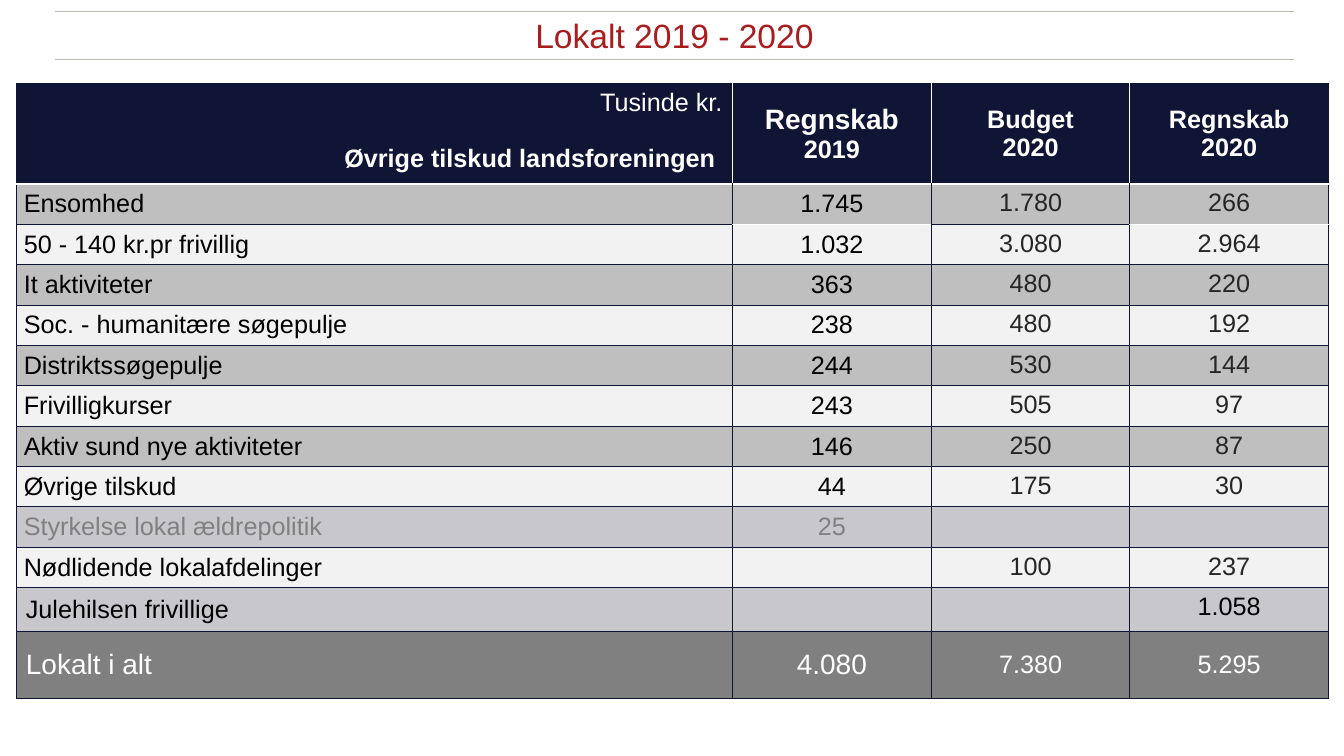
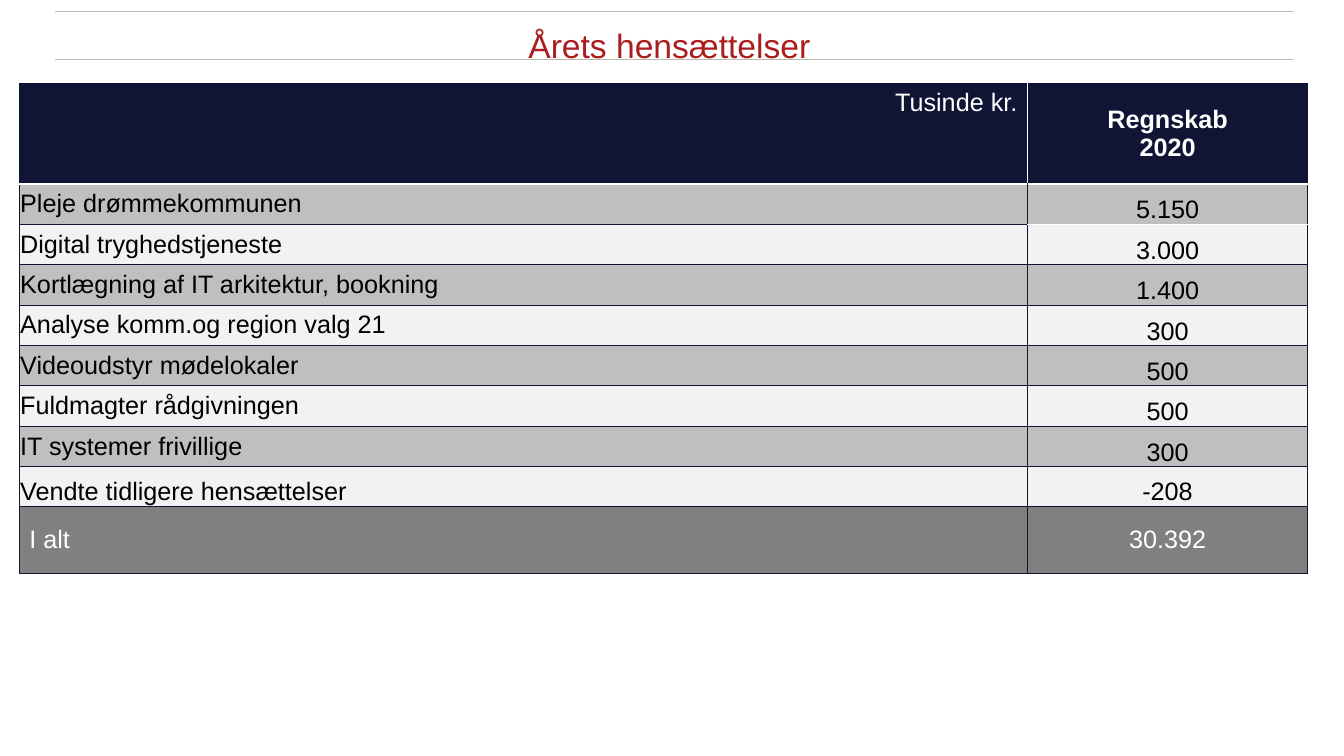
"""Builds two slides with tables of local grants and of the year's provisions."""
from lxml import etree
from pptx import Presentation
from pptx import util as u
from pptx.dml.color import RGBColor
from pptx.enum import shapes, text
from pptx.oxml import ns

RED = RGBColor(0xA9, 0x1D, 0x1E)
RULE = RGBColor(0xBC, 0xB8, 0xAF)
NAVY = RGBColor(0x11, 0x15, 0x35)
EDGE = RGBColor(0x10, 0x14, 0x35)
WHITE = RGBColor(0xFF, 0xFF, 0xFF)
BLACK = RGBColor(0x00, 0x00, 0x00)
INK = RGBColor(0x26, 0x26, 0x26)
GREY = RGBColor(0xBF, 0xBF, 0xBF)
PALE = RGBColor(0xC8, 0xC7, 0xCB)
MIST = RGBColor(0xF2, 0xF2, 0xF2)
TOTAL = RGBColor(0x80, 0x80, 0x80)

FONT = "Arial"
LEFT, CENTER, RIGHT = text.PP_ALIGN.LEFT, text.PP_ALIGN.CENTER, text.PP_ALIGN.RIGHT
TOP, MIDDLE, BOTTOM = text.MSO_ANCHOR.TOP, text.MSO_ANCHOR.MIDDLE, text.MSO_ANCHOR.BOTTOM
HEADER_HEIGHT, TOTAL_HEIGHT, TABLE_TOP = 13.27, 8.93, 11.07


class Deck:
    """Holds the style and the current slide; lengths are percent of the slide."""

    def __init__(self):
        self.prs = Presentation()
        self.prs.slide_width, self.prs.slide_height = u.Inches(13.33), u.Inches(7.5)
        self.slide = None

    def x(self, share):
        return round(self.prs.slide_width * share / 100)

    def y(self, share):
        return round(self.prs.slide_height * share / 100)

    def new_slide(self, title, left, top):
        self.slide = self.prs.slides.add_slide(self.prs.slide_layouts[6])
        for height in (7.87, 1.47):
            self.rule(4.13, 96.25, height)
        self.title(title, left, top)

    def rule(self, start, end, height):
        line = self.slide.shapes.add_connector(
            shapes.MSO_CONNECTOR.STRAIGHT,
            self.x(start), self.y(height), self.x(end), self.y(height))
        line.line.color.rgb = RULE
        line.line.width = u.Pt(0.75)
        etree.SubElement(line._element.spPr, ns.qn("a:effectLst"))

    def title(self, words, left, top):
        box = self.slide.shapes.add_textbox(
            self.x(left), self.y(top), self.x(92.12), self.y(6.93))
        frame = box.text_frame
        frame.word_wrap = True
        frame.vertical_anchor = MIDDLE
        frame.margin_left = frame.margin_right = u.Inches(0.06)
        frame.margin_top = frame.margin_bottom = u.Inches(0.06)
        self.style_text(frame.paragraphs[0], words, 24, RED, CENTER)

    def style_text(self, paragraph, words, size, color, align, bold=False):
        paragraph.text = words
        paragraph.alignment = align
        font = paragraph.font
        font.name, font.size, font.bold = FONT, u.Pt(size), bold
        font.color.rgb = color

    def cell(self, cell, words, fill, color, align, anchor=MIDDLE, size=18, bold=False):
        cell.fill.solid()
        cell.fill.fore_color.rgb = fill
        cell.vertical_anchor = anchor
        frame = cell.text_frame
        for i, line in enumerate(words.split("\n")):
            paragraph = frame.add_paragraph() if i else frame.paragraphs[0]
            self.style_text(paragraph, line, size, color, align, bold)

    def borders(self, cell, **white):
        """Draws navy edges, or white ones at the widths given by side."""
        props = cell._tc.get_or_add_tcPr()
        for i, side in enumerate("LRTB"):
            edge = etree.Element(ns.qn(f"a:ln{side}"), w=str(u.Pt(white.get(side, 0.75))))
            fill = etree.SubElement(edge, ns.qn("a:solidFill"))
            color = WHITE if side in white else EDGE
            etree.SubElement(fill, ns.qn("a:srgbClr"), val=str(color))
            props.insert(i, edge)

    def table(self, left, widths, row_heights, header, body, total,
              anchors, inks, label_inset, total_sizes):
        heights = [HEADER_HEIGHT, *row_heights, TOTAL_HEIGHT]
        grid = self.slide.shapes.add_table(
            len(heights), len(widths), self.x(left), self.y(TABLE_TOP),
            self.x(sum(widths)), self.y(sum(heights))).table
        grid.first_row = grid.horz_banding = False
        for column, width in zip(grid.columns, widths):
            column.width = self.x(width)
        for row, height in zip(grid.rows, heights):
            row.height = self.y(height)

        last = len(widths) - 1
        for c, words in enumerate(header):
            self.cell(grid.cell(0, c), words, NAVY, WHITE, CENTER if c else RIGHT,
                      MIDDLE if c else TOP, bold=bool(c))
        for r, values in enumerate(body, 1):
            fill = MIST if r % 2 == 0 else GREY if all(values) else PALE
            for c, words in enumerate(values):
                spot = grid.cell(r, c)
                self.cell(spot, words, fill, inks[c], CENTER if c else LEFT, anchors[c])
                if c == 0:
                    spot.margin_left = u.Inches(label_inset)
                if anchors[c] == BOTTOM:
                    spot.margin_bottom = 0
        for c, words in enumerate(total):
            self.cell(grid.cell(len(body) + 1, c), words, TOTAL, WHITE,
                      CENTER if c else LEFT, size=total_sizes[c])

        for r in range(len(heights)):
            for c in range(last + 1):
                white = {}
                if r == 0:
                    white["B"] = 1 if c in (1, last) else 2
                    if c > 0:
                        white["L"] = 1
                    if c < last:
                        white["R"] = 1
                elif r == 1:
                    white["T"] = 1 if c in (1, last) else 2
                if c in (1, last) and r in (1, 2):
                    white["B" if r == 1 else "T"] = 1
                self.borders(grid.cell(r, c), **white)
        return grid


def local_grants(deck):
    deck.new_slide("Lokalt 2019 - 2020", 4.13, 1.2)
    grants = [
        ("Ensomhed", "1.745", "1.780", "266"),
        ("50 - 140 kr.pr frivillig", "1.032", "3.080", "2.964"),
        ("It aktiviteter", "363", "480", "220"),
        ("Soc. - humanitære søgepulje", "238", "480", "192"),
        ("Distriktssøgepulje", "244", "530", "144"),
        ("Frivilligkurser", "243", "505", "97"),
        ("Aktiv sund nye aktiviteter", "146", "250", "87"),
        ("Øvrige tilskud", "44", "175", "30"),
        ("Styrkelse lokal ældrepolitik", "25", "", ""),
        ("Nødlidende lokalafdelinger", "", "100", "237"),
        ("Julehilsen frivillige", "", "", "1.058"),
    ]
    grid = deck.table(
        1.25, [53.26] + [14.78] * 3, [5.33] * 10 + [5.8],
        ("Tusinde kr.\nØvrige tilskud landsforeningen ", "Regnskab\n2019",
         "Budget\n2020", "Regnskab\n2020"),
        grants, ("Lokalt i alt", "4.080", "7.380", "5.295"),
        (MIDDLE, MIDDLE, TOP, TOP), (BLACK, BLACK, INK, INK), 0.07, (20, 20, 18, 18))
    subtitle = grid.cell(0, 0).text_frame.paragraphs[1]
    subtitle.space_before = u.Pt(20)
    subtitle.font.bold = True
    grid.cell(0, 1).text_frame.paragraphs[0].font.size = u.Pt(20)
    for c in (0, 1):
        grid.cell(9, c).text_frame.paragraphs[0].font.color.rgb = TOTAL
    grid.cell(11, 3).text_frame.paragraphs[0].font.color.rgb = BLACK
    for r in (11, 12):
        grid.cell(r, 0).margin_left = u.Inches(0.09)


def provisions(deck):
    deck.new_slide("Årets hensættelser", 3.75, 2.53)
    items = [
        ("Pleje drømmekommunen", "5.150"),
        ("Digital tryghedstjeneste", "3.000"),
        ("Kortlægning af IT arkitektur, bookning", "1.400"),
        ("Analyse komm.og region valg 21", "300"),
        ("Videoudstyr mødelokaler", "500"),
        ("Fuldmagter rådgivningen", "500"),
        ("IT systemer frivillige", "300"),
        ("Vendte tidligere hensættelser", "-208"),
    ]
    grid = deck.table(
        1.43, [75.02, 20.85], [5.25] * len(items),
        ("Tusinde kr.", "Regnskab\n2020"), items, ("I alt", "30.392"),
        (MIDDLE, BOTTOM), (BLACK, BLACK), 0.01, (18, 18))
    sold = grid.cell(len(items), 0)
    sold.vertical_anchor = BOTTOM
    sold.margin_bottom = 0


def main():
    deck = Deck()
    local_grants(deck)
    provisions(deck)
    deck.prs.save("out.pptx")


if __name__ == "__main__":
    main()
